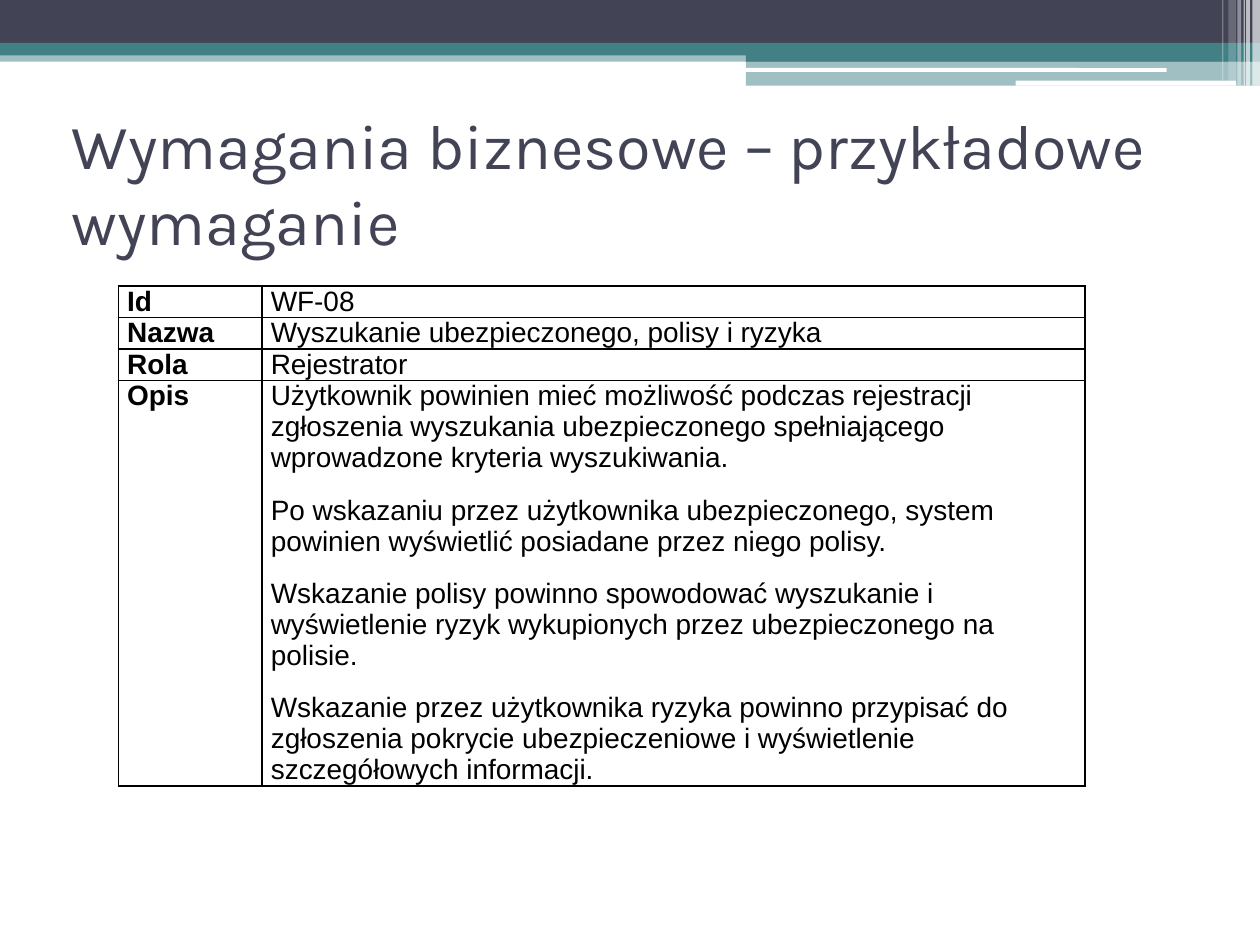
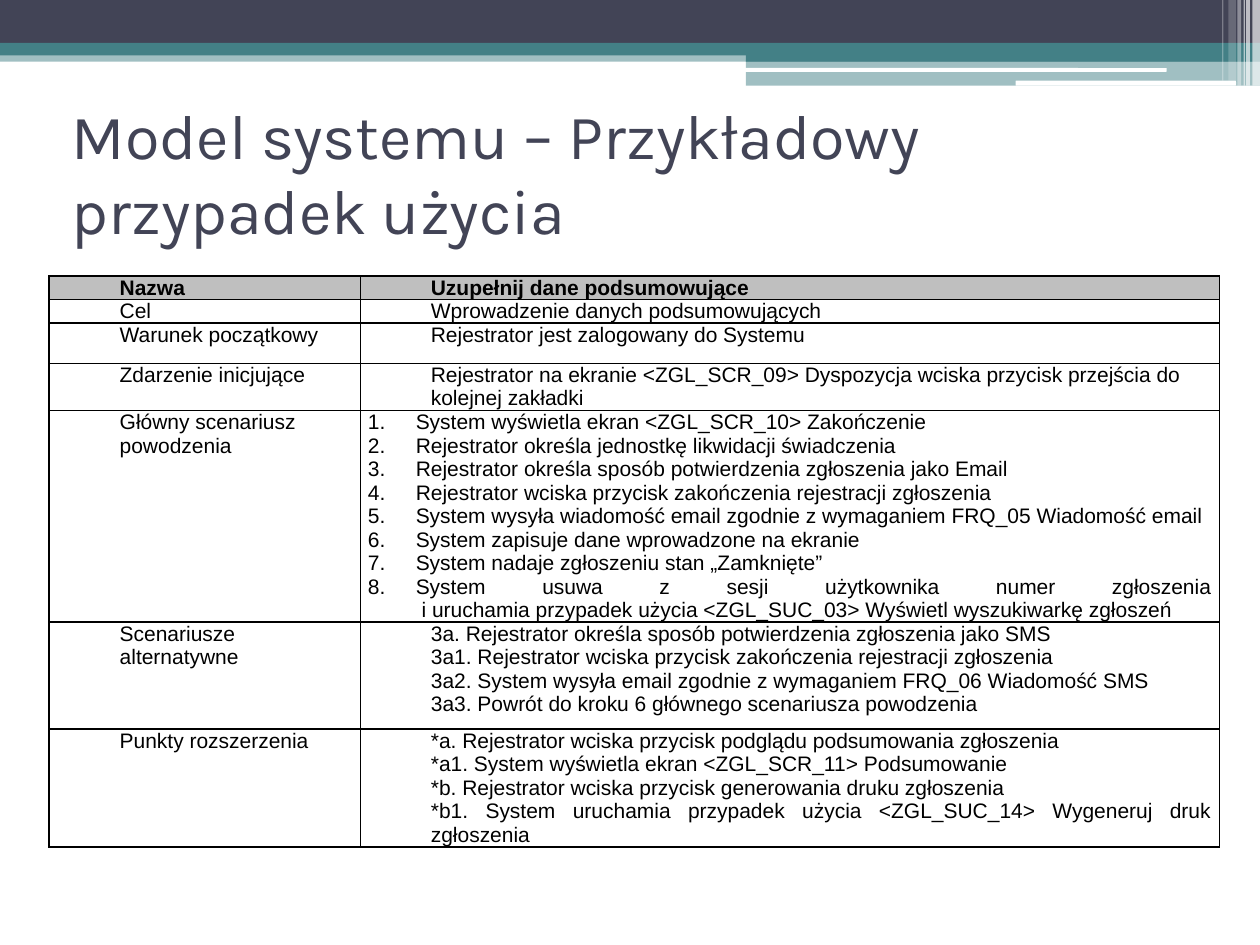
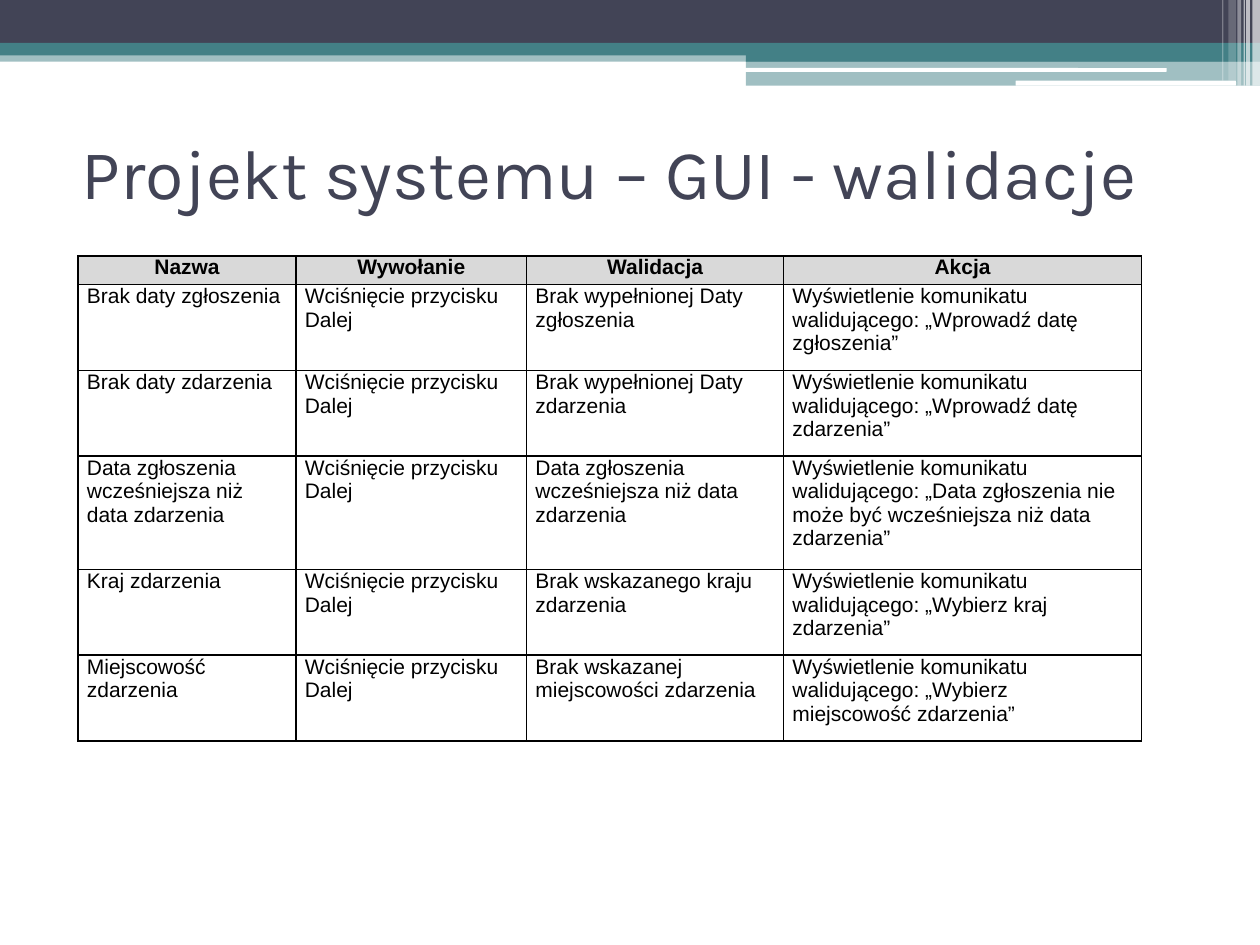
from dataclasses import dataclass
from typing import Any

from lxml.etree import SubElement
from pptx import Presentation
from pptx.dml.color import RGBColor
from pptx.enum.shapes import MSO_SHAPE as Preset
from pptx.enum.text import MSO_ANCHOR as Anchor, MSO_AUTO_SIZE as AutoSize, PP_ALIGN as Align
from pptx.oxml import parse_xml
from pptx.oxml.ns import nsdecls, qn
from pptx.util import Inches, Pt

NAVY, TEAL, WHITE, BLACK = "424456", "438086", "FFFFFF", "000000"
TITLE_FONT, TABLE_FONT = "Karla", "Arial"
BORDER_WIDTH = Pt(1)
TITLE_ONLY = 5


@dataclass(frozen=True)
class Band:
    left: float
    top: float
    width: float
    height: float
    color: str
    opacity: int = 100
    preset: Preset = Preset.RECTANGLE


@dataclass(frozen=True)
class Para:
    text: str
    before: int = 0
    after: int = 0
    align: Align = Align.LEFT
    left: float = 0
    hanging: float = 0
    numbered: bool = False


Cell = list[Para]


@dataclass(frozen=True)
class Grid:
    left: float
    top: float
    columns: list[float]
    heights: list[float]
    rows: list[list[Cell]]
    size: int
    margin: float
    header_fill: str | None = None
    bold_column: bool = False
    middle_rows: int = 0


@dataclass(frozen=True)
class Page:
    title: str
    title_left: float
    title_top: float
    title_size: int
    grid: Grid


BANDS = [
    Band(0, 0.4, 10, 0.09, TEAL, 50),
    Band(0, 0, 10, 0.34, NAVY),
    Band(0, 0.34, 10, 0.1, TEAL),
    Band(5.92, 0.39, 4.08, 0.1, TEAL),
    Band(5.92, 0.48, 4.08, 0.2, TEAL, 50),
    Band(5.91, 0.54, 3.35, 0.03, WHITE, preset=Preset.ROUNDED_RECTANGLE),
    Band(8.06, 0.64, 1.75, 0.04, WHITE, preset=Preset.ROUNDED_RECTANGLE),
    Band(9.94, 0, 0.06, 0.68, WHITE, 65),
    Band(9.89, 0, 0.03, 0.68, WHITE, 65),
    Band(9.87, 0, 0.01, 0.68, WHITE, 60),
    Band(9.82, 0, 0.03, 0.68, WHITE, 40),
    Band(9.75, 0, 0.06, 0.64, WHITE, 20),
    Band(9.7, 0, 0.01, 0.64, WHITE, 30),
]


def spaced(*texts: str, align: Align = Align.LEFT) -> Cell:
    return [Para(text, before=6, after=6, align=align) for text in texts]


def label(text: str) -> Cell:
    return [Para(text, before=6, left=0.5)]


def last_spaced(texts: tuple[str, ...], **layout: Any) -> Cell:
    """Paragraphs of one layout, with space after the last only."""
    return [Para(text, after=6 if text == texts[-1] else 0, **layout) for text in texts]


def details(*texts: str) -> Cell:
    align = Align.JUSTIFY if len(texts) > 1 else Align.LEFT
    return last_spaced(texts, left=0.5, align=align)


def steps(*texts: str) -> Cell:
    return last_spaced(texts, left=0.38, hanging=0.38, align=Align.JUSTIFY, numbered=True)


def validation(name: str, condition: str, message: str) -> list[Cell]:
    return [spaced(text) for text in (
        name, "Wciśnięcie przycisku Dalej", condition,
        f"Wyświetlenie komunikatu walidującego: „{message}”")]


REQUIREMENT = Grid(
    0.94, 2.27, [1.14, 6.53], [0.25, 0.25, 0.25, 3.22],
    [
        [spaced("Id"), spaced("WF-08")],
        [spaced("Nazwa"), spaced("Wyszukanie ubezpieczonego, polisy i ryzyka")],
        [spaced("Rola"), spaced("Rejestrator")],
        [spaced("Opis"), spaced(
            "Użytkownik powinien mieć możliwość podczas rejestracji zgłoszenia wyszukania "
            "ubezpieczonego spełniającego wprowadzone kryteria wyszukiwania.",
            "Po wskazaniu przez użytkownika ubezpieczonego, system powinien wyświetlić "
            "posiadane przez niego polisy.",
            "Wskazanie polisy powinno spowodować wyszukanie i wyświetlenie ryzyk "
            "wykupionych przez ubezpieczonego na polisie.",
            "Wskazanie przez użytkownika ryzyka powinno przypisać do zgłoszenia pokrycie "
            "ubezpieczeniowe i wyświetlenie szczegółowych informacji.")],
    ],
    size=16, margin=0.07, bold_column=True)

USE_CASE = Grid(
    0.39, 2.19, [2.47, 6.82], [0.18, 0.18, 0.32, 0.37, 1.68, 0.85, 0.93],
    [
        [label("Nazwa"), details("Uzupełnij dane podsumowujące")],
        [label("Cel"), details("Wprowadzenie danych podsumowujących")],
        [label("Warunek początkowy"), details("Rejestrator jest zalogowany do Systemu")],
        [label("Zdarzenie inicjujące"), details(
            "Rejestrator na ekranie <ZGL_SCR_09> Dyspozycja wciska przycisk przejścia do "
            "kolejnej zakładki")],
        [label("Główny scenariusz powodzenia"), steps(
            "System wyświetla ekran <ZGL_SCR_10> Zakończenie",
            "Rejestrator określa jednostkę likwidacji świadczenia",
            "Rejestrator określa sposób potwierdzenia zgłoszenia jako Email",
            "Rejestrator wciska przycisk zakończenia rejestracji zgłoszenia",
            "System wysyła wiadomość email zgodnie z wymaganiem FRQ_05 Wiadomość email",
            "System zapisuje dane wprowadzone na ekranie",
            "System nadaje zgłoszeniu stan „Zamknięte”",
            "System usuwa z sesji użytkownika numer zgłoszenia\v i uruchamia przypadek "
            "użycia <ZGL_SUC_03> Wyświetl wyszukiwarkę zgłoszeń")],
        [label("Scenariusze alternatywne"), details(
            "3a. Rejestrator określa sposób potwierdzenia zgłoszenia jako SMS",
            "3a1. Rejestrator wciska przycisk zakończenia rejestracji zgłoszenia",
            "3a2. System wysyła email zgodnie z wymaganiem FRQ_06 Wiadomość SMS",
            "3a3. Powrót do kroku 6 głównego scenariusza powodzenia")],
        [label("Punkty rozszerzenia"), details(
            "*a. Rejestrator wciska przycisk podglądu podsumowania zgłoszenia",
            "*a1. System wyświetla ekran <ZGL_SCR_11> Podsumowanie",
            "*b. Rejestrator wciska przycisk generowania druku zgłoszenia",
            "*b1. System uruchamia przypadek użycia <ZGL_SUC_14> Wygeneruj druk zgłoszenia")],
    ],
    size=12, margin=0.06, header_fill="BFBFBF", middle_rows=2)

VALIDATIONS = Grid(
    0.62, 2.03, [1.73, 1.83, 2.04, 2.84], [0.23, 0.68, 0.68, 0.9, 0.68, 0.68],
    [
        [spaced(text, align=Align.CENTER)
         for text in ("Nazwa", "Wywołanie", "Walidacja", "Akcja")],
        validation("Brak daty zgłoszenia", "Brak wypełnionej Daty zgłoszenia",
                   "Wprowadź datę zgłoszenia"),
        validation("Brak daty zdarzenia", "Brak wypełnionej Daty zdarzenia",
                   "Wprowadź datę zdarzenia"),
        validation("Data zgłoszenia wcześniejsza niż data zdarzenia",
                   "Data zgłoszenia wcześniejsza niż data zdarzenia",
                   "Data zgłoszenia nie może być wcześniejsza niż data zdarzenia"),
        validation("Kraj zdarzenia", "Brak wskazanego kraju zdarzenia",
                   "Wybierz kraj zdarzenia"),
        validation("Miejscowość zdarzenia", "Brak wskazanej miejscowości zdarzenia",
                   "Wybierz miejscowość zdarzenia"),
    ],
    size=12, margin=0.07, header_fill="D9D9D9")

PAGES = [
    Page("Wymagania biznesowe – przykładowe wymaganie", 0.47, 0.86, 36, REQUIREMENT),
    Page("Model systemu – Przykładowy przypadek użycia", 0.47, 0.78, 36, USE_CASE),
    Page("Projekt systemu – GUI - walidacje", 0.55, 0.78, 40, VALIDATIONS),
]


def set_all(target: Any, values: dict[str, Any]) -> None:
    for attribute, value in values.items():
        setattr(target, attribute, value)


def paint(fill: Any, color: str) -> None:
    fill.solid()
    fill.fore_color.rgb = RGBColor.from_string(color)


def style_font(font: Any, name: str, size: int, color: str, bold: bool = False) -> None:
    set_all(font, {"name": name, "size": Pt(size), "bold": bold})
    font.color.rgb = RGBColor.from_string(color)


def add_master_band(slide: Any, master: Any, band: Band, number: int) -> None:
    """Draw a band on the slide, then move it to the master that all slides share."""
    shape = slide.shapes.add_shape(
        band.preset, Inches(band.left), Inches(band.top), Inches(band.width), Inches(band.height))
    shape.shadow.inherit = False
    shape.line.fill.background()
    paint(shape.fill, band.color)
    element = shape._element
    if band.opacity < 100:
        color = element.spPr.find(".//" + qn("a:srgbClr"))
        SubElement(color, qn("a:alpha"), val=str(band.opacity * 1000))
    element.nvSpPr.cNvPr.set("id", str(100 + number))
    master.shapes._spTree.append(element)


def fill_title(slide: Any, page: Page) -> None:
    title = slide.shapes.title
    set_all(title, {"left": Inches(page.title_left), "top": Inches(page.title_top),
                    "width": Inches(9), "height": Inches(1.17)})
    frame = title.text_frame
    frame.text = page.title
    set_all(frame, {"vertical_anchor": Anchor.MIDDLE, "auto_size": AutoSize.NONE,
                    "word_wrap": True})
    paragraph = frame.paragraphs[0]
    paragraph.alignment = Align.LEFT
    style_font(paragraph.runs[0].font, TITLE_FONT, page.title_size, NAVY)


def add_borders(cell: Any) -> None:
    properties = cell._tc.get_or_add_tcPr()
    for position, side in enumerate("LRTB"):
        properties.insert(position, parse_xml(
            f'<a:ln{side} {nsdecls("a")} w="{BORDER_WIDTH}"><a:solidFill>'
            f'<a:srgbClr val="{BLACK}"/></a:solidFill></a:ln{side}>'))


def write_paragraph(paragraph: Any, para: Para, size: int, bold: bool) -> None:
    paragraph.text = para.text
    set_all(paragraph, {"alignment": para.align, "space_before": Pt(para.before),
                        "space_after": Pt(para.after)})
    properties = paragraph._p.get_or_add_pPr()
    properties.set("marL", str(Inches(para.left)))
    properties.set("indent", str(-Inches(para.hanging)))
    if para.numbered:
        SubElement(properties, qn("a:buAutoNum"), type="arabicPeriod")
    for run in paragraph.runs:
        style_font(run.font, TABLE_FONT, size, BLACK, bold)


def add_grid(slide: Any, grid: Grid) -> None:
    table = slide.shapes.add_table(
        len(grid.rows), len(grid.columns), Inches(grid.left), Inches(grid.top),
        Inches(sum(grid.columns)), Inches(sum(grid.heights))).table
    set_all(table, {"first_row": False, "horz_banding": False})
    for column, width in zip(table.columns, grid.columns):
        column.width = Inches(width)
    for row, height in zip(table.rows, grid.heights):
        row.height = Inches(height)
    for r, row_cells in enumerate(grid.rows):
        for c, paras in enumerate(row_cells):
            cell = table.cell(r, c)
            is_header = grid.header_fill is not None and r == 0
            set_all(cell, {
                "margin_left": Inches(grid.margin), "margin_right": Inches(grid.margin),
                "margin_top": 0, "margin_bottom": 0,
                "vertical_anchor": Anchor.MIDDLE if r < grid.middle_rows else Anchor.TOP})
            if is_header:
                paint(cell.fill, grid.header_fill)
            else:
                cell.fill.background()
            add_borders(cell)
            frame = cell.text_frame
            bold = is_header or (grid.bold_column and c == 0)
            for i, para in enumerate(paras):
                paragraph = frame.add_paragraph() if i else frame.paragraphs[0]
                write_paragraph(paragraph, para, grid.size, bold)


def main() -> None:
    deck = Presentation()
    set_all(deck, {"slide_width": Inches(10), "slide_height": Inches(7.5)})
    layout = deck.slide_layouts[TITLE_ONLY]
    for page in PAGES:
        slide = deck.slides.add_slide(layout)
        fill_title(slide, page)
        add_grid(slide, page.grid)
    for number, band in enumerate(BANDS):
        add_master_band(deck.slides[0], deck.slide_master, band, number)
    deck.save("out.pptx")


if __name__ == "__main__":
    main()
